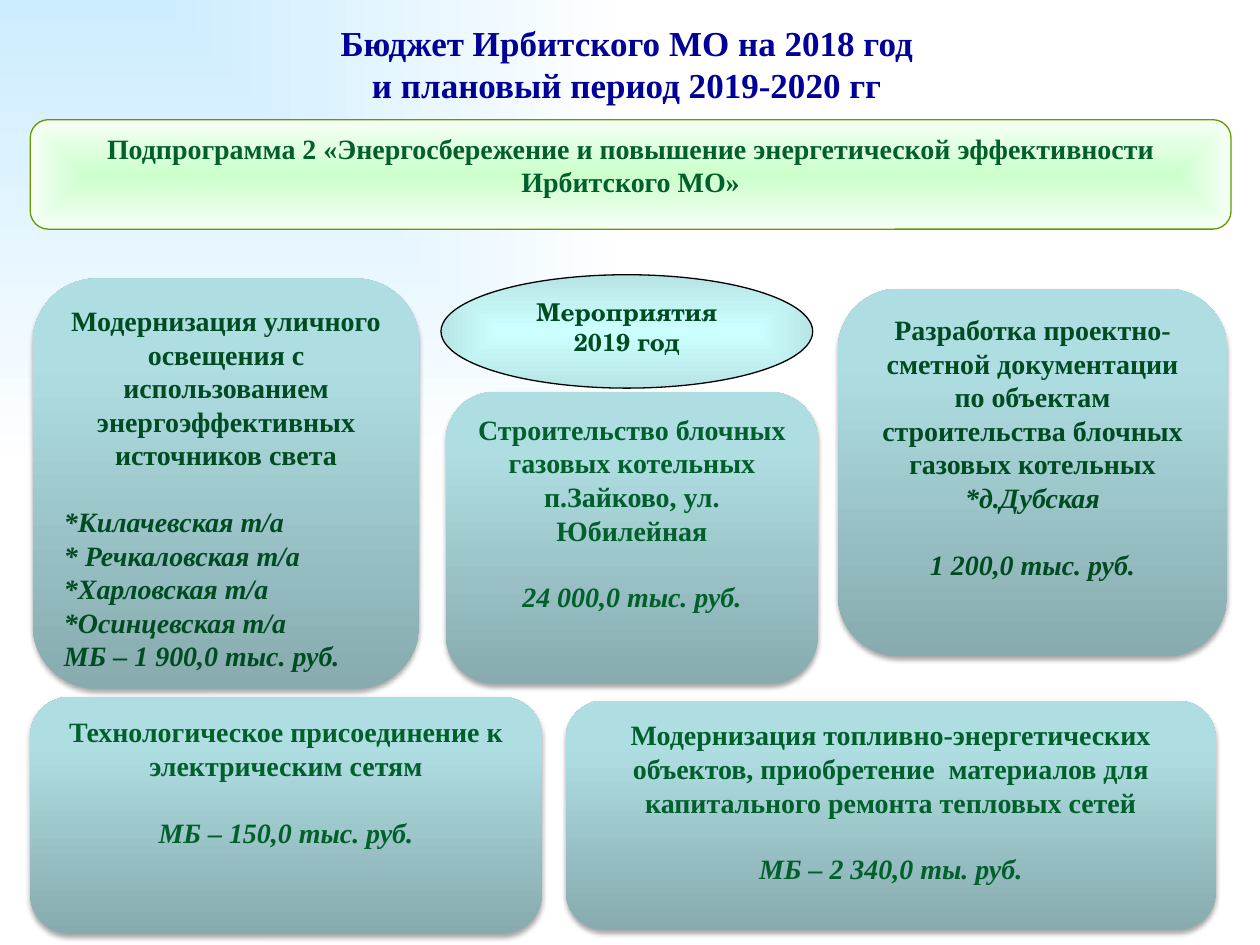
"""Builds the budget slide on the energy-saving subprogramme."""
import pptx
import pptx.util
import pptx.dml.color
import pptx.enum.shapes
import pptx.enum.text
import pptx.oxml
import pptx.oxml.ns

Pt = pptx.util.Pt
SHAPE = pptx.enum.shapes.MSO_SHAPE
ALIGN = pptx.enum.text.PP_ALIGN
ANCHOR = pptx.enum.text.MSO_ANCHOR

COLORS = {
    "title": "000099", "green": "00602B", "dark": "004C22",
    "band_line": "669900", "oval_line": "000000", "shadow": "000000",
}
SERIF = "Times New Roman"
SCHOLA = "TeX Gyre Schola"
LINE_GAP = 19

CENTER = '<a:path path="{}"><a:fillToRect l="50000" t="50000" r="50000" b="50000"/></a:path>'
CORNER = '<a:path path="rect"><a:fillToRect r="100000" b="100000"/></a:path>'
UPWARD = '<a:lin ang="16200000" scaled="0"/>'
GRADIENTS = {
    "page": ([(0, "CCECFF"), (100, "FFFFFF")], CORNER),
    "band": ([(0, "CCFFCC"), (100, "F6FFF6")], CENTER.format("shape")),
    "oval": ([(0, "CCFFFF"), (100, "B7E5E5")], CENTER.format("rect")),
    "card": ([(0, "87ABAE"), (80, "AFDEE2"), (100, "AFE0E4")], UPWARD),
}

TITLE = "Бюджет Ирбитского МО на 2018 год \vи плановый период 2019-2020 гг "
BAND = "Подпрограмма 2 «Энергосбережение и повышение энергетической эффективности Ирбитского МО»"
OVAL = ["Мероприятия", "2019 год"]

CARDS = [
    {"box": (18.7, 159.1, 221, 234.7), "color": "dark", "details_align": ALIGN.JUSTIFY,
     "heads": ["Модернизация уличного освещения с использованием энергоэффективных источников света"],
     "details": ["*Килачевская т/а", "* Речкаловская т/а", "*Харловская т/а",
                 "*Осинцевская т/а", "МБ – 1 900,0 тыс. руб."], "gap_before": 0},
    {"box": (478.8, 164.9, 222.5, 210.2), "color": "dark",
     "heads": ["Разработка проектно-сметной документации по объектам строительства "
               "блочных газовых котельных"],
     "details": ["*д.Дубская", "1 200,0 тыс. руб."], "gap_before": 1},
    {"box": (254.9, 223.9, 212.4, 167), "color": "green",
     "heads": ["Строительство блочных газовых котельных", "п.Зайково, ул. Юбилейная"],
     "details": ["24 000,0 тыс. руб."], "gap_before": 0},
    {"box": (17.3, 398.2, 292.3, 135.4), "color": "green",
     "heads": ["Технологическое присоединение к электрическим сетям"],
     "details": ["МБ – 150,0 тыс. руб."], "gap_before": 0},
    {"box": (323.3, 400.3, 371.5, 131), "color": "green",
     "heads": ["Модернизация топливно-энергетических объектов, приобретение  материалов "
               "для капитального ремонта тепловых сетей"],
     "details": ["МБ – 2 340,0 ты. руб."], "gap_before": 0},
]


def rgb(name):
    return pptx.dml.color.RGBColor.from_string(COLORS[name])


def parse(xml):
    ns = pptx.oxml.ns.nsdecls("a")
    return pptx.oxml.parse_xml(xml.replace(" ", f" {ns} ", 1))


def paint(fill, element, name):
    fill.gradient()
    stops, direction = GRADIENTS[name]
    stop_xml = "".join(f'<a:gs pos="{pos * 1000}"><a:srgbClr val="{color}"/></a:gs>'
                       for pos, color in stops)
    old = element.xpath(".//a:gradFill")[0]
    old.getparent().replace(old, parse(
        f'<a:gradFill rotWithShape="1"><a:gsLst>{stop_xml}</a:gsLst>{direction}</a:gradFill>'))


def place(s, box):
    s.left, s.top, s.width, s.height = map(Pt, box)


def write(p, text, size, color, font=SERIF, italic=False, align=ALIGN.CENTER, gap=0):
    p.text = text
    p.alignment = align
    p.space_before = Pt(gap)
    for r in p.runs:
        r.font.name, r.font.size = font, Pt(size)
        r.font.bold, r.font.italic = True, italic
        r.font.color.rgb = rgb(color)


def add_box(slide, kind, box, gradient, line=None):
    s = slide.shapes.add_shape(kind, *map(Pt, box))
    s.shadow.inherit = False
    paint(s.fill, s._element, gradient)
    if line:
        s.line.color.rgb = rgb(line)
        s.line.width = Pt(0.75)
    else:
        s.line.fill.background()
    s.text_frame.word_wrap = True
    s.text_frame.vertical_anchor = ANCHOR.TOP
    return s


def add_paragraph(tf, first):
    return tf.paragraphs[0] if first else tf.add_paragraph()


def add_card(slide, card):
    s = add_box(slide, SHAPE.ROUNDED_RECTANGLE, card["box"], "card")
    s._element.xpath(".//a:effectLst")[0].append(parse(
        f'<a:outerShdw blurRad="{Pt(3.1)}" dist="{Pt(1.8)}" dir="5400000" rotWithShape="0">'
        f'<a:srgbClr val="{COLORS["shadow"]}"><a:alpha val="35000"/></a:srgbClr></a:outerShdw>'))
    tf = s.text_frame
    for i, text in enumerate(card["heads"]):
        write(add_paragraph(tf, i == 0), text, 16, card["color"])
    for i, text in enumerate(card["details"]):
        write(tf.add_paragraph(), text, 16, card["color"], italic=True,
              align=card.get("details_align", ALIGN.CENTER),
              gap=LINE_GAP if i == card["gap_before"] else 0)


def main():
    prs = pptx.Presentation()
    prs.slide_width, prs.slide_height = Pt(720), Pt(540)
    slide = prs.slides.add_slide(prs.slide_layouts[5])
    paint(slide.background.fill, slide._element, "page")

    title = slide.shapes.title
    place(title, (36.7, 25.2, 648, 36.7))
    tf = title.text_frame
    tf.auto_size = pptx.enum.text.MSO_AUTO_SIZE.NONE
    tf.vertical_anchor = ANCHOR.MIDDLE
    tf.margin_bottom = Pt(18)
    write(tf.paragraphs[0], TITLE, 20, "title")

    band = add_box(slide, SHAPE.ROUNDED_RECTANGLE, (17.3, 68.4, 686.2, 62.6), "band", "band_line")
    write(band.text_frame.paragraphs[0], BAND, 16, "green")

    oval = add_box(slide, SHAPE.OVAL, (252, 157, 212.4, 64.8), "oval", "oval_line")
    for i, text in enumerate(OVAL):
        write(add_paragraph(oval.text_frame, i == 0), text, 14, "dark", SCHOLA)

    for card in CARDS:
        add_card(slide, card)
    prs.save("out.pptx")


if __name__ == "__main__":
    main()
